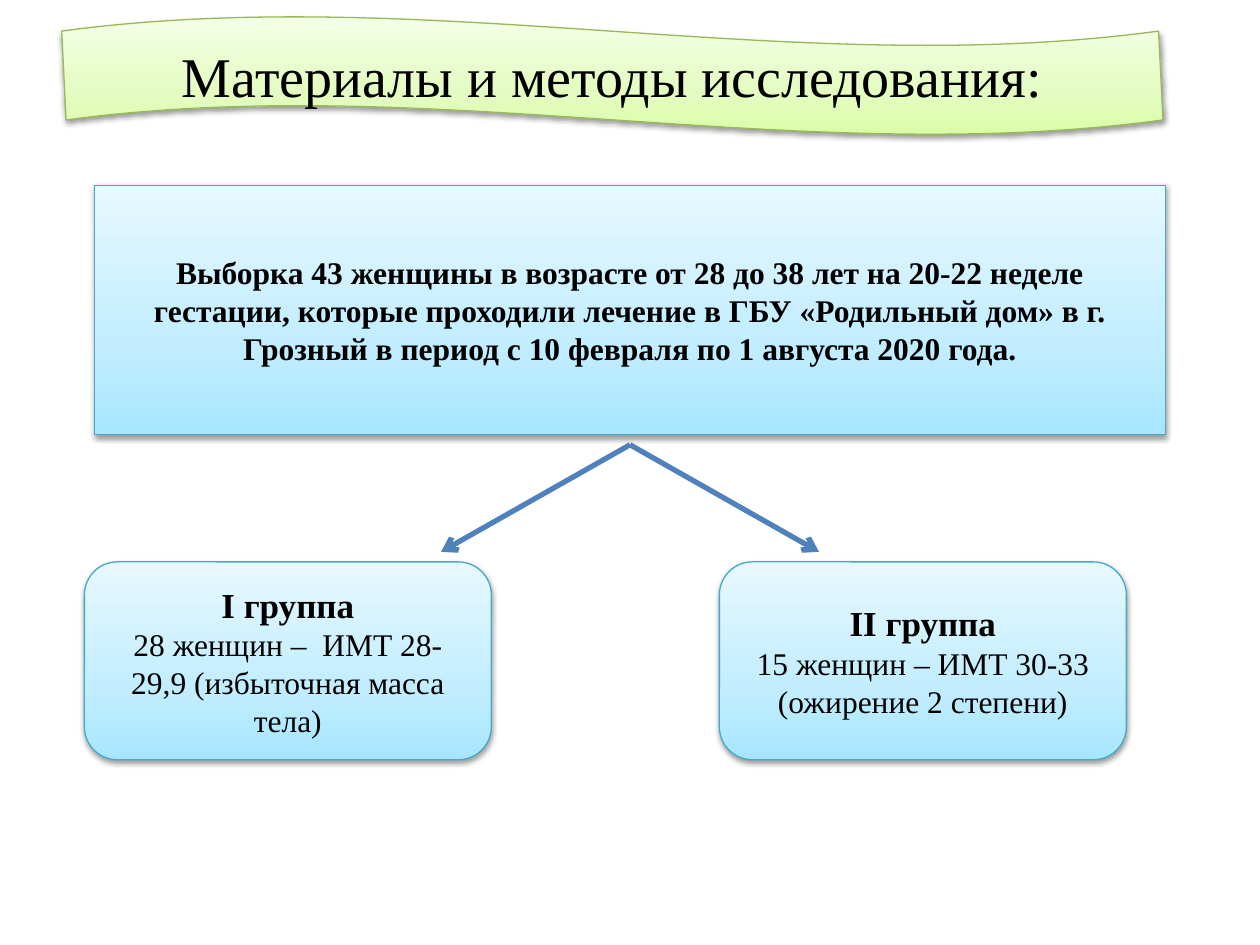
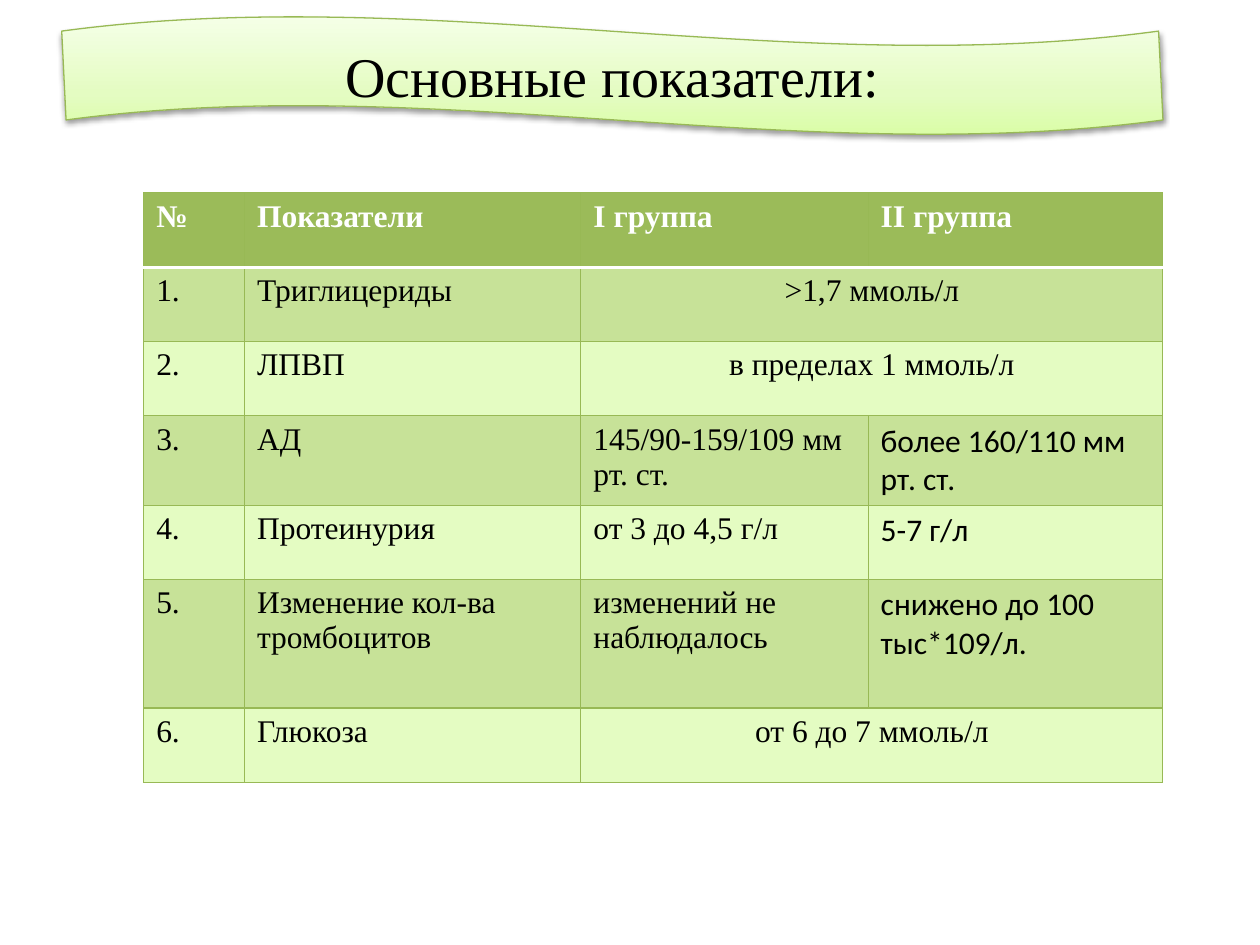
from dataclasses import dataclass
from typing import NamedTuple, Sequence

import lxml.etree
import pptx
import pptx.dml.color
import pptx.enum.shapes
import pptx.enum.text
import pptx.oxml.ns
import pptx.util

SHAPES = pptx.enum.shapes.MSO_SHAPE
CENTER = pptx.enum.text.PP_ALIGN.CENTER
LEFT = pptx.enum.text.PP_ALIGN.LEFT
MIDDLE = pptx.enum.text.MSO_ANCHOR.MIDDLE

# The slide is a grid of 100 columns by 75 rows of square units.
COLUMNS, ROWS = 100, 75
UNIT = pptx.util.Inches(0.1)


@dataclass(frozen=True)
class Palette:
    """Gradient from the bottom of a shape to its top, with the outline colour."""
    bottom: str
    middle: str
    top: str
    line: str


@dataclass(frozen=True)
class Theme:
    green: Palette = Palette("DAFDA7", "E4FCC2", "F5FFE7", "98B955")
    blue: Palette = Palette("A7E6FF", "C1EDFF", "E7F8FF", "46AAC5")
    text: str = "000000"
    white: str = "FFFFFF"
    arrow: str = "4F81BD"
    header: str = "9BBB59"
    bands: tuple[str, str] = ("C7E298", "E4FCC2")
    font: str = "Times New Roman"
    second_font: str = "Calibri"
    title_size: int = 32
    heading_size: int = 20
    body_size: int = 18
    outline: float = 0.75
    header_rule: float = 2
    arrow_width: float = 3


THEME = Theme()


class Frame(NamedTuple):
    left: float
    top: float
    width: float
    height: float

    def lengths(self) -> tuple[int, ...]:
        return tuple(units(value) for value in self)


class Line(NamedTuple):
    text: str
    size: int
    bold: bool = False


class Box(NamedTuple):
    frame: Frame
    kind: SHAPES
    lines: Sequence[Line]


class Indicator(NamedTuple):
    """A table row; without a second value the first spans both groups."""
    name: str
    first: str
    second: str = ""


TITLE_FRAME = Frame(4.9, 1.3, 87.4, 9.4)
SAMPLE = Box(Frame(7.5, 14.7, 85, 19.8), SHAPES.RECTANGLE, [
    Line("Выборка 43 женщины в возрасте от 28 до 38 лет на 20-22 неделе гестации, "
         "которые проходили лечение в ГБУ «Родильный дом» в г. Грозный "
         "в период с 10 февраля по 1 августа 2020 года.", THEME.body_size, True)])
GROUPS = [
    ("I группа", "28 женщин –  ИМТ 28-29,9 (избыточная масса тела)"),
    ("II группа", "15 женщин – ИМТ 30-33 (ожирение 2 степени)"),
]
GROUP_FRAME = Frame(6.7, 44.6, 32.3, 15.7)
GROUP_STEP = 50.4
ARROW_START = (50, 35.3)
ARROW_REACH = (15, 8.5)

TABLE_LEFT, TABLE_TOP = 11.4, 15.3
TABLE_COLUMNS = [8, 26.7, 22.8, 23.4]
TABLE_ROWS = [5.9, 5.9, 5.9, 7.1, 5.9, 10.2, 5.9]
TABLE_HEADER = ["№", "Показатели", "I группа", "II группа"]
INDICATORS = [
    Indicator("Триглицериды", ">1,7 ммоль/л"),
    Indicator("ЛПВП", "в пределах 1 ммоль/л"),
    Indicator("АД", "145/90-159/109 мм рт. ст.", "более 160/110 мм рт. ст."),
    Indicator("Протеинурия", "от 3 до 4,5 г/л", "5-7 г/л"),
    Indicator("Изменение кол-ва тромбоцитов", "изменений не наблюдалось",
              "снижено до 100 тыс*109/л."),
    Indicator("Глюкоза", "от 6 до 7 ммоль/л"),
]


def units(value: float) -> int:
    return round(value * UNIT)


def rgb(color: str) -> pptx.dml.color.RGBColor:
    return pptx.dml.color.RGBColor.from_string(color)


def add_child(parent, tag: str, **attributes):
    child = lxml.etree.SubElement(parent, pptx.oxml.ns.qn(tag))
    for name, value in attributes.items():
        child.set(name, str(value))
    return child


def format_paragraph(paragraph, size: int, bold: bool = False, color: str = THEME.text,
                     font: str = THEME.font, alignment=CENTER) -> None:
    paragraph.alignment = alignment
    for run in paragraph.runs:
        run.font.name = font
        run.font.size = pptx.util.Pt(size)
        run.font.bold = bold
        run.font.color.rgb = rgb(color)


def add_gradient_shape(slide, kind: SHAPES, frame: Frame, palette: Palette):
    shape = slide.shapes.add_shape(kind, *frame.lengths())
    shape.fill.gradient()
    shape.fill.gradient_angle = 90
    stops = shape._element.spPr.find(".//" + pptx.oxml.ns.qn("a:gsLst"))
    for stop in list(stops):
        stops.remove(stop)
    for percent, color in ((0, palette.bottom), (35, palette.middle), (100, palette.top)):
        add_child(add_child(stops, "a:gs", pos=percent * 1000), "a:srgbClr", val=color)
    shape.line.color.rgb = rgb(palette.line)
    shape.line.width = pptx.util.Pt(THEME.outline)
    add_shadow(shape)
    return shape


def add_shadow(shape) -> None:
    shape.shadow.inherit = False
    effects = shape._element.spPr.find(pptx.oxml.ns.qn("a:effectLst"))
    shadow = add_child(effects, "a:outerShdw", blurRad=pptx.util.Pt(3.1),
                       dist=pptx.util.Pt(1.6), dir=90 * 60000, rotWithShape=0)
    color = add_child(shadow, "a:srgbClr", val="000000")
    add_child(color, "a:alpha", val=38000)


def add_titled_slide(presentation, title: str):
    """Add a slide with the green wave band and the title over it."""
    slide = presentation.slides.add_slide(presentation.slide_layouts.get_by_name("Title Only"))
    wave = add_gradient_shape(slide, SHAPES.WAVE, TITLE_FRAME, THEME.green)
    wave.adjustments[1] = 0.002
    placeholder = slide.shapes.title
    (placeholder.left, placeholder.top,
     placeholder.width, placeholder.height) = TITLE_FRAME.lengths()
    wave._element.addnext(placeholder._element)
    placeholder.text_frame.text = title
    placeholder.text_frame.vertical_anchor = MIDDLE
    format_paragraph(placeholder.text_frame.paragraphs[0], THEME.title_size)
    return slide


def add_box(slide, box: Box) -> None:
    shape = add_gradient_shape(slide, box.kind, box.frame, THEME.blue)
    text_frame = shape.text_frame
    text_frame.word_wrap = True
    text_frame.vertical_anchor = MIDDLE
    text_frame.text = "\n".join(line.text for line in box.lines)
    for paragraph, line in zip(text_frame.paragraphs, box.lines):
        format_paragraph(paragraph, line.size, line.bold)


def add_arrow(slide, direction: int) -> None:
    (x, y), (across, down) = ARROW_START, ARROW_REACH
    connector = slide.shapes.add_connector(
        pptx.enum.shapes.MSO_CONNECTOR.STRAIGHT,
        *map(units, (x, y, x + direction * across, y + down)))
    connector.line.color.rgb = rgb(THEME.arrow)
    connector.line.width = pptx.util.Pt(THEME.arrow_width)
    add_child(connector.line._get_or_add_ln(), "a:tailEnd", type="arrow")
    add_child(connector._element.spPr, "a:effectLst")


def set_borders(cell, row: int) -> None:
    properties = cell._tc.get_or_add_tcPr()
    white_sides = {0: "a:lnB", 1: "a:lnT"}
    for position, side in enumerate(("a:lnL", "a:lnR", "a:lnT", "a:lnB")):
        is_rule = white_sides.get(row) == side
        width = THEME.header_rule if is_rule else THEME.outline
        border = lxml.etree.Element(pptx.oxml.ns.qn(side), w=str(pptx.util.Pt(width)))
        fill = add_child(border, "a:solidFill")
        add_child(fill, "a:srgbClr", val=THEME.white if is_rule else THEME.green.line)
        properties.insert(position, border)


def add_indicator_table(slide) -> None:
    frame = Frame(TABLE_LEFT, TABLE_TOP, sum(TABLE_COLUMNS), sum(TABLE_ROWS))
    table = slide.shapes.add_table(
        len(TABLE_ROWS), len(TABLE_COLUMNS), *frame.lengths()).table
    for column, width in zip(table.columns, TABLE_COLUMNS):
        column.width = units(width)
    for row, height in zip(table.rows, TABLE_ROWS):
        row.height = units(height)

    contents = [TABLE_HEADER] + [
        [f"{number}.", *indicator] for number, indicator in enumerate(INDICATORS, 1)]
    for row, texts in enumerate(contents):
        is_header = row == 0
        is_merged = not texts[-1]
        for column, text in enumerate(texts):
            cell = table.cell(row, column)
            cell.fill.solid()
            cell.fill.fore_color.rgb = rgb(
                THEME.header if is_header else THEME.bands[(row - 1) % 2])
            set_borders(cell, row)
            cell.text_frame.text = text
            is_last = column == len(texts) - 1
            format_paragraph(
                cell.text_frame.paragraphs[0], THEME.body_size, is_header,
                THEME.white if is_header else THEME.text,
                THEME.second_font if is_last and not is_header else THEME.font,
                CENTER if is_merged and column == 2 else LEFT)
        if is_merged:
            table.cell(row, 2).merge(table.cell(row, 3))


def build_methods_slide(presentation) -> None:
    slide = add_titled_slide(presentation, "Материалы и методы исследования:")
    for index, (name, description) in enumerate(GROUPS):
        frame = GROUP_FRAME._replace(left=GROUP_FRAME.left + index * GROUP_STEP)
        lines = [Line(name, THEME.heading_size, True), Line(description, THEME.body_size)]
        add_box(slide, Box(frame, SHAPES.FLOWCHART_ALTERNATE_PROCESS, lines))
    for direction in (-1, 1):
        add_arrow(slide, direction)
    add_box(slide, SAMPLE)


def build_indicators_slide(presentation) -> None:
    slide = add_titled_slide(presentation, "Основные показатели:")
    add_indicator_table(slide)


def main() -> None:
    presentation = pptx.Presentation()
    presentation.slide_width = units(COLUMNS)
    presentation.slide_height = units(ROWS)
    build_methods_slide(presentation)
    build_indicators_slide(presentation)
    presentation.save("out.pptx")


if __name__ == "__main__":
    main()
